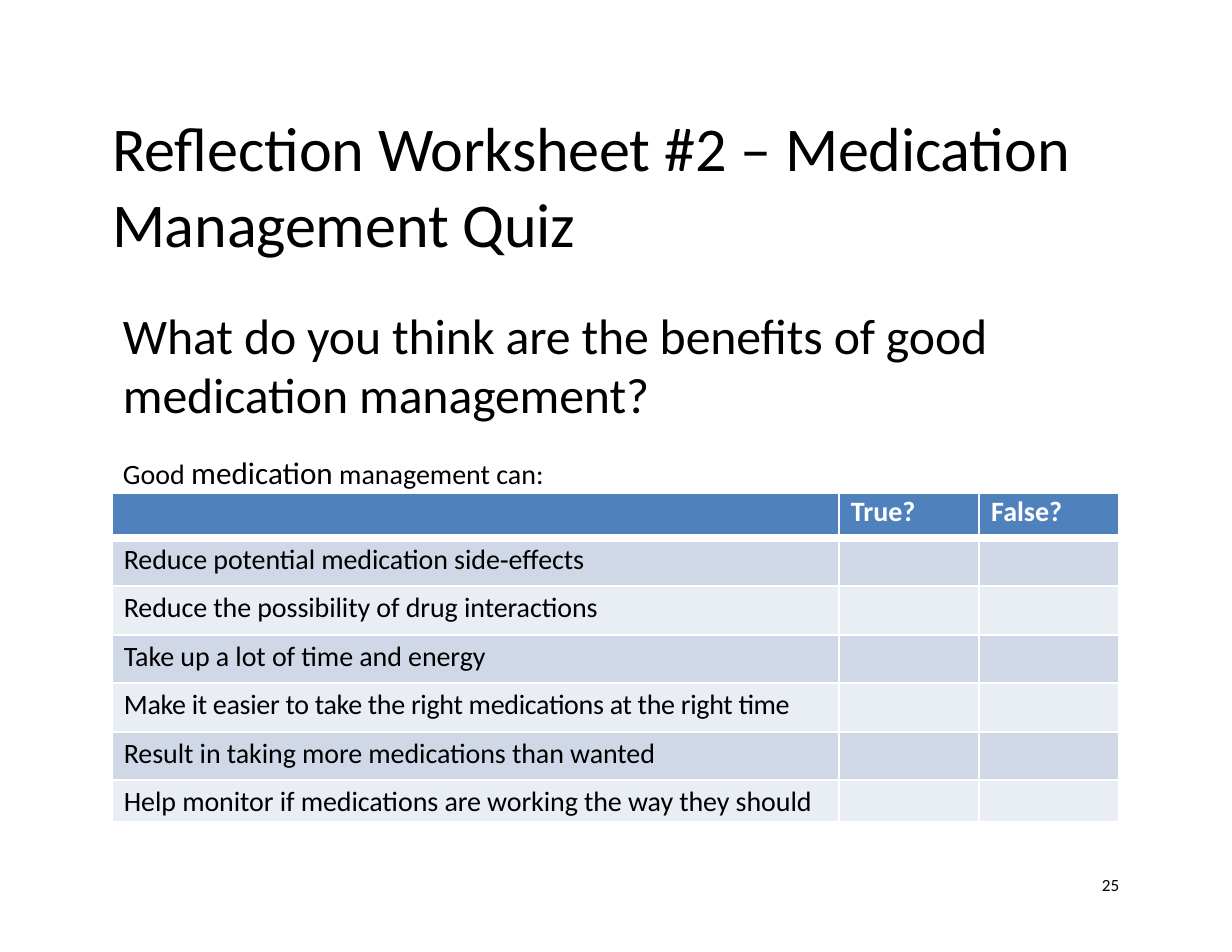
from pptx import Presentation
from pptx.dml.color import RGBColor
from pptx.enum.text import MSO_ANCHOR, MSO_AUTO_SIZE, PP_ALIGN
from pptx.oxml.ns import qn
from pptx.util import Cm, Pt
from lxml import etree

TOP, LEFT, NO_FIT = MSO_ANCHOR.TOP, PP_ALIGN.LEFT, MSO_AUTO_SIZE.NONE
FONT = "Calibri"
BLACK, WHITE, HEADER_BLUE = "000000", "FFFFFF", "4F81BD"
BANDS = ("D0D8E8", "E9EDF4")

# Content
TITLE = "Reflection Worksheet #2 – Medication Management Quiz"
QUESTION = "What do you think are the benefits of good medication management?"
LEAD_IN = [("Good ", 18), ("medication", 20), (" management can:", 18)]
HEADINGS = ["", "True?", "False?"]
# Statement and its letter spacing in points
STATEMENTS = [
    ("Reduce potential medication side‐effects", -0.05),
    ("Reduce the possibility of drug interactions", -0.05),
    ("Take up a lot of time and energy", -0.05),
    ("Make it easier to take the right medications at the right time", -0.2),
    ("Result in taking more medications than wanted", -0.05),
    ("Help monitor if medications are working the way they should", -0.05),
]
PAGE_NUMBER = "25"

# Layout, in cm
MARGIN, CONTENT_WIDTH = 2.54, 22.84
COLUMN_WIDTHS = [16.49, 3.18, 3.17]
ROW_HEIGHTS = [1.02] + [1.1] * 5 + [0.93]


def color(hex_code):
    return RGBColor.from_string(hex_code)


def set_font(font, size, hex_code=BLACK, bold=False):
    font.name, font.size, font.bold = FONT, Pt(size), bold
    font.color.rgb = color(hex_code)


def write(frame, text, size, hex_code=BLACK, bold=False, spacing=0):
    paragraph = frame.paragraphs[0]
    run = paragraph.add_run()
    run.text = text
    set_font(paragraph.font, size, hex_code, bold)
    run.font._element.set("spc", str(round(spacing * 100)))
    return paragraph


def set_insets(frame, left=0, top=0, right=0, bottom=0):
    frame.margin_left, frame.margin_top = Cm(left), Cm(top)
    frame.margin_right, frame.margin_bottom = Cm(right), Cm(bottom)


def add_text_frame(slide, left, top, width, height, wrap=True):
    box = slide.shapes.add_textbox(Cm(left), Cm(top), Cm(width), Cm(height))
    box.text_frame.word_wrap = wrap
    return box.text_frame


def add_border(cell, side, width):
    line = etree.SubElement(cell._tc.get_or_add_tcPr(), qn(f"a:ln{side}"), w=str(Pt(width)))
    fill = etree.SubElement(line, qn("a:solidFill"))
    etree.SubElement(fill, qn("a:srgbClr"), val=WHITE)


def add_quiz(slide):
    rows = [[(heading, 0) for heading in HEADINGS]]
    rows += [[statement, ("", 0), ("", 0)] for statement in STATEMENTS]
    table = slide.shapes.add_table(
        len(rows), len(HEADINGS), Cm(MARGIN), Cm(11.18),
        Cm(CONTENT_WIDTH), Cm(sum(ROW_HEIGHTS))).table
    for column, width in zip(table.columns, COLUMN_WIDTHS):
        column.width = Cm(width)
    for r, (row, height) in enumerate(zip(rows, ROW_HEIGHTS)):
        table.rows[r].height = Cm(height)
        header = r == 0
        for c, (text, spacing) in enumerate(row):
            cell = table.cell(r, c)
            set_insets(cell, left=0.27, top=0.05 if header else 0.1)
            cell.vertical_anchor = TOP
            # Inner borders only, with a thick rule under the header
            if c > 0:
                add_border(cell, "L", 1.5)
            if c < len(row) - 1:
                add_border(cell, "R", 1.5)
            if not header:
                add_border(cell, "T", 6 if r == 1 else 1.5)
            if r < len(rows) - 1:
                add_border(cell, "B", 6 if header else 1.5)
            cell.fill.solid()
            cell.fill.fore_color.rgb = color(HEADER_BLUE if header else BANDS[(r - 1) % 2])
            if text:
                paragraph = write(cell.text_frame, text, 18, WHITE if header else BLACK,
                                  header, spacing)
                paragraph.space_before = Pt(1.6 if header else 2.6)


def main():
    deck = Presentation()
    deck.slide_width, deck.slide_height = Cm(27.94), Cm(21.59)
    slide = deck.slides.add_slide(deck.slide_layouts.get_by_name("Title Only"))

    # Title
    title = slide.shapes.title
    title.left, title.top = Cm(MARGIN), Cm(2.21)
    title.width, title.height = Cm(CONTENT_WIDTH), Cm(3.71)
    frame = title.text_frame
    set_insets(frame, top=0.23)
    frame.vertical_anchor, frame.auto_size, frame.word_wrap = TOP, NO_FIT, True
    heading = write(frame, TITLE, 40, spacing=-0.1)
    heading.alignment, heading.line_spacing = LEFT, 1.02

    # Quiz table
    add_quiz(slide)

    # Question and lead-in
    write(add_text_frame(slide, MARGIN, 6.78, CONTENT_WIDTH, 3), QUESTION, 32, spacing=-0.1)
    lead_in = add_text_frame(slide, MARGIN, 10.16, 10.19, 1.12, wrap=False).paragraphs[0]
    for text, size in LEAD_IN:
        run = lead_in.add_run()
        run.text = text
        set_font(run.font, size)

    # Page number
    number = add_text_frame(slide, 24.89, 19.89, 0.61, 0.43)
    set_insets(number, left=0.1)
    write(number, PAGE_NUMBER, 11).line_spacing = Pt(11.5)

    deck.save("out.pptx")


if __name__ == "__main__":
    main()
